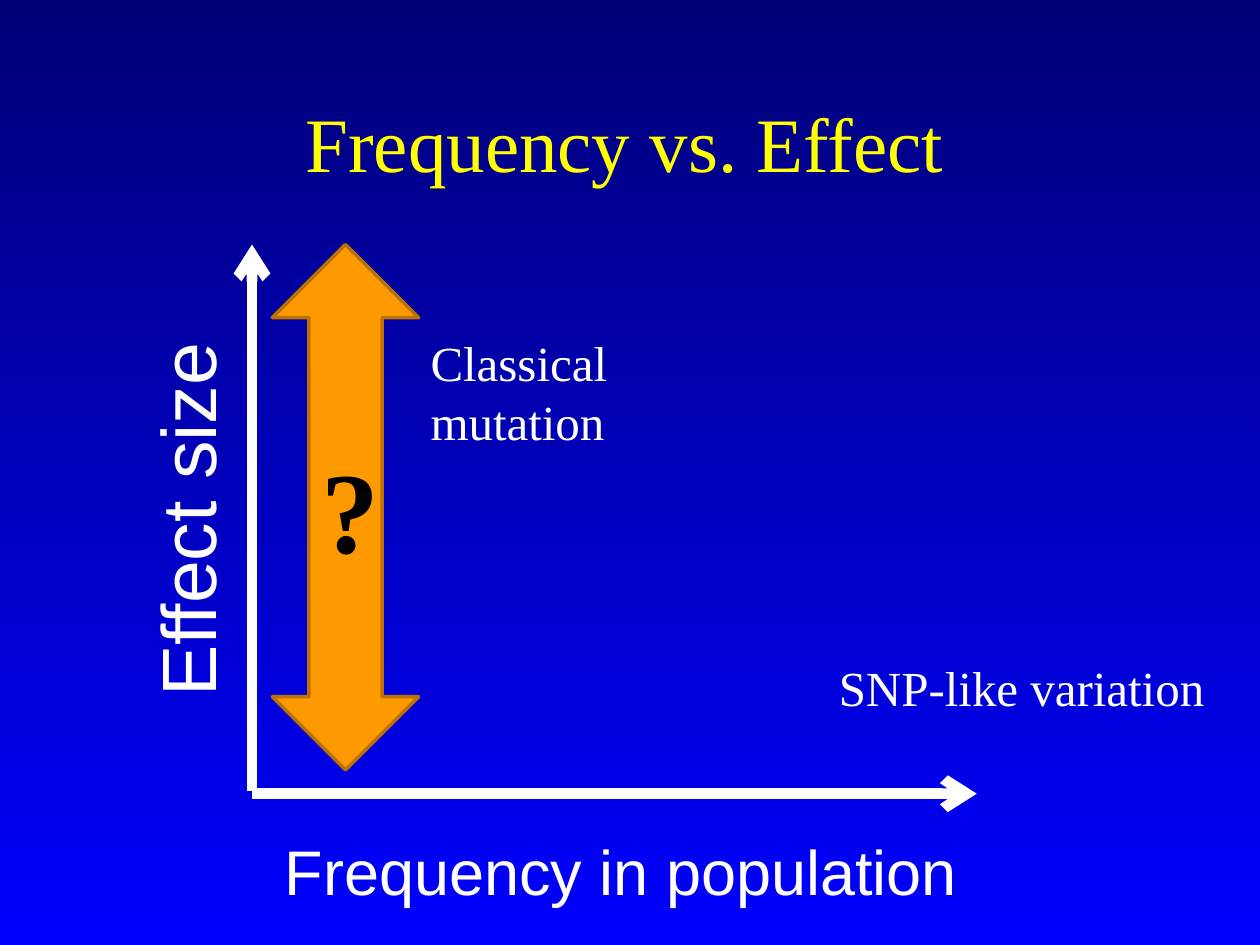
import pptx
import pptx.util
import pptx.dml.color
import pptx.enum.dml
import pptx.enum.shapes
import pptx.enum.text
import pptx.oxml
import pptx.oxml.ns

Cm, Pt = pptx.util.Cm, pptx.util.Pt
RGB = pptx.dml.color.RGBColor.from_string
ALIGN = pptx.enum.text.PP_ALIGN
HUES = {"top": "000076", "base": "0000FF", "title": "FFFF00", "text": "FFFFFF",
        "fill": "FF9900", "edge": "BD7100", "mark": "000000"}
SERIF, SANS = "Times New Roman", "Arial"


def write(shape, text, font, size, hue, align=ALIGN.LEFT, bold=False):
    frame = shape.text_frame
    frame.text = text
    style = {"name": font, "size": Pt(size), "bold": bold}
    for para in frame.paragraphs:
        para.alignment = align
        for run in para.runs:
            for key, value in style.items():
                setattr(run.font, key, value)
            run.font.color.rgb = RGB(HUES[hue])


deck = pptx.Presentation()
deck.slide_width, deck.slide_height = Cm(25.4), Cm(19.05)
slide = deck.slides.add_slide(deck.slide_layouts[5])
shapes = slide.shapes

# Background
back = slide.background.fill
back.gradient()
back.gradient_angle = 270
for stop, spot, hue in zip(back.gradient_stops, (0, 1), ("top", "base")):
    stop.position = spot
    stop.color.rgb = RGB(HUES[hue])

# Title
title = shapes.title
place = {"left": 1.8, "top": 1.27, "width": 21.59, "height": 3.18}
for key, value in place.items():
    setattr(title, key, Cm(value))
title.text_frame.vertical_anchor = pptx.enum.text.MSO_ANCHOR.MIDDLE
write(title, "Frequency vs. Effect", SERIF, 44, "title", ALIGN.CENTER)

# Axes
for ends in ((5.08, 16, 19.69, 16), (5.08, 15.95, 5.08, 4.93)):
    axis = shapes.add_connector(pptx.enum.shapes.MSO_CONNECTOR.STRAIGHT,
                                *map(Cm, ends))
    axis.line.width = Pt(6)
    axis.line.color.rgb = RGB(HUES["text"])
    head = pptx.oxml.ns.qn("a:tailEnd")
    axis.line._get_or_add_ln().makeelement(head)
    tip = axis.line._get_or_add_ln().makeelement(head, {"type": "arrow"})
    axis.line._get_or_add_ln().append(tip)
    props = axis._element.spPr
    props.append(props.makeelement(pptx.oxml.ns.qn("a:effectLst")))

# Labels: text, box, turn, font, size
labels = [
    ("Frequency in population", (5.49, 16.66, 14.2, 1.8), 0, SANS, 36),
    ("Effect size", (-0.1, 9.37, 7.72, 2.13), 270, SANS, 44),
    ("Classical\nmutation", (8.43, 6.58, 4.34, 2.64), 0, SERIF, 28),
    ("SNP-like variation", (16.66, 13.13, 7.95, 1.45), 0, SERIF, 28),
]
for text, box, turn, font, size in labels:
    label = shapes.add_textbox(*map(Cm, box))
    label.rotation = turn
    label.text_frame.word_wrap = False
    label.text_frame.auto_size = pptx.enum.text.MSO_AUTO_SIZE.SHAPE_TO_FIT_TEXT
    write(label, text, font, size, "text")

# Double arrow
arrow = shapes.add_shape(pptx.enum.shapes.MSO_SHAPE.UP_DOWN_ARROW,
                         *map(Cm, (5.49, 4.93, 2.95, 10.59)))
arrow.shadow.inherit = False
arrow.fill.solid()
arrow.fill.fore_color.rgb = RGB(HUES["fill"])
arrow.line.color.rgb = RGB(HUES["edge"])
arrow.line.width = Pt(2)
arrow.text_frame.vertical_anchor = pptx.enum.text.MSO_ANCHOR.MIDDLE
write(arrow, "?", SERIF, 66, "mark", ALIGN.CENTER, True)

deck.save("out.pptx")
